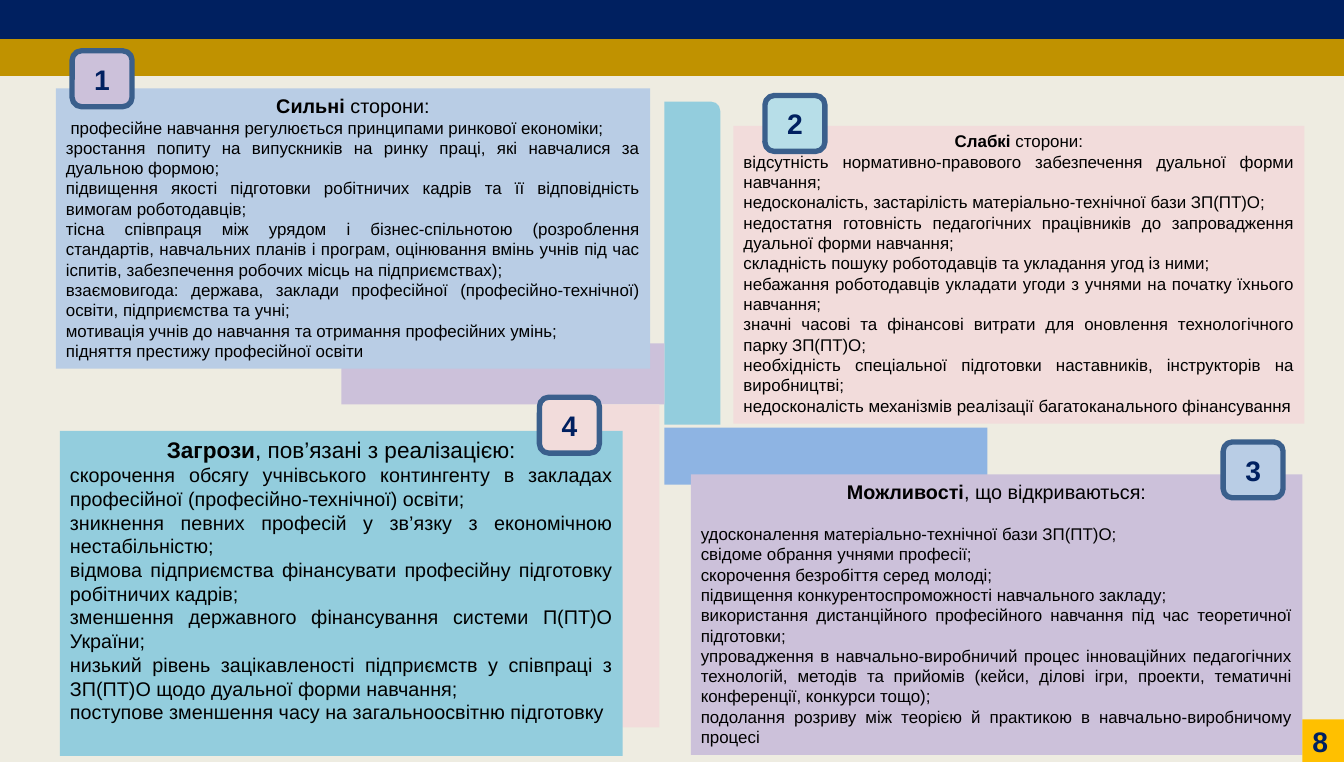
from pptx import Presentation
from pptx.dml.color import RGBColor
from pptx.enum.shapes import MSO_SHAPE
from pptx.enum.text import MSO_ANCHOR, PP_ALIGN
from pptx.util import Inches, Pt

RECTANGLE = MSO_SHAPE.RECTANGLE
ROUNDED = MSO_SHAPE.ROUNDED_RECTANGLE
ONE_ROUND_CORNER = MSO_SHAPE.ROUND_1_RECTANGLE
LEFT, CENTER, JUSTIFY = PP_ALIGN.LEFT, PP_ALIGN.CENTER, PP_ALIGN.JUSTIFY
TOP, MIDDLE = MSO_ANCHOR.TOP, MSO_ANCHOR.MIDDLE

BACKGROUND = RGBColor(0xEE, 0xEC, 0xE1)
NAVY = RGBColor(0x00, 0x20, 0x60)
GOLD = RGBColor(0xC0, 0x92, 0x00)
YELLOW = RGBColor(0xFF, 0xC0, 0x00)
BLACK = RGBColor(0x00, 0x00, 0x00)
TEAL = RGBColor(0x93, 0xCD, 0xDD)
PALE_TEAL = RGBColor(0xB7, 0xDE, 0xE8)
BLUE = RGBColor(0x8E, 0xB4, 0xE3)
PALE_BLUE = RGBColor(0xB9, 0xCD, 0xE5)
LILAC = RGBColor(0xCC, 0xC1, 0xDA)
PINK = RGBColor(0xF2, 0xDC, 0xDB)
BADGE_LINE = RGBColor(0x3A, 0x5F, 0x8C)

presentation = Presentation()
presentation.slide_width = Inches(13.23)
presentation.slide_height = Inches(7.5)
slide = presentation.slides.add_slide(presentation.slide_layouts[6])
slide.background.fill.solid()
slide.background.fill.fore_color.rgb = BACKGROUND


def add_box(kind, place, fill, line=None, anchor=TOP):
    shape = slide.shapes.add_shape(kind, *[Inches(length) for length in place])
    shape.shadow.inherit = False
    shape.fill.solid()
    shape.fill.fore_color.rgb = fill
    if line is None:
        shape.line.fill.background()
    else:
        shape.line.color.rgb = line
        shape.line.width = Pt(3.78)
    shape.text_frame.word_wrap = True
    shape.text_frame.vertical_anchor = anchor
    return shape


def add_run(paragraph, text, size, color=BLACK, bold=False):
    run = paragraph.add_run()
    run.text = text
    run.font.name = "Arial"
    run.font.size = Pt(size)
    run.font.bold = bold
    run.font.color.rgb = color


# Header bars
for top, color in [(0.36, GOLD), (0, NAVY)]:
    add_box(RECTANGLE, (0, top, 13.23, 0.36), color, color)

# Pinwheel arms behind the panels
for place, rotation, color in [
    ((6.54, 1, 0.55, 3.18), 0, TEAL),
    ((7.85, 2.9, 0.56, 3.18), 90, BLUE),
    ((4.65, 2.09, 0.6, 3.18), 270, LILAC),
    ((5.91, 3.98, 0.58, 3.18), 180, PINK),
]:
    add_box(ONE_ROUND_CORNER, place, color).rotation = rotation

# SWOT panels: place, fill, heading (bold, plain, size, space after), item size, items
panels = [
    ((0.55, 0.87, 5.85, 2.76), PALE_BLUE, ("Сильні", " сторони:", 14, 0), 12, [
        " професійне навчання регулюється принципами ринкової економіки;",
        "зростання попиту на випускників на ринку праці, які навчалися за дуальною формою;",
        "підвищення якості підготовки робітничих кадрів та її відповідність вимогам роботодавців;",
        "тісна співпраця між урядом і бізнес-спільнотою (розроблення стандартів, навчальних "
        "планів і програм, оцінювання вмінь учнів під час іспитів, забезпечення робочих місць "
        "на підприємствах);",
        "взаємовигода: держава, заклади професійної (професійно-технічної) освіти, "
        "підприємства та учні;",
        "мотивація учнів до навчання та отримання професійних умінь;",
        "підняття престижу професійної освіти",
    ]),
    ((7.22, 1.24, 5.62, 2.93), PINK, ("Слабкі", " сторони:", 12, 0), 12, [
        "відсутність нормативно-правового забезпечення дуальної форми навчання;",
        "недосконалість, застарілість матеріально-технічної бази ЗП(ПТ)О;",
        "недостатня готовність педагогічних працівників до запровадження дуальної форми навчання;",
        "складність пошуку роботодавців та укладання угод із ними;",
        "небажання роботодавців укладати угоди з учнями на початку їхнього навчання;",
        "значні часові та фінансові витрати для оновлення технологічного парку ЗП(ПТ)О;",
        "необхідність спеціальної підготовки наставників, інструкторів на виробництві;",
        "недосконалість механізмів реалізації багатоканального фінансування",
    ]),
    ((0.59, 4.24, 5.54, 3.2), TEAL, ("Загрози", ", пов’язані з реалізацією:", 16, 0), 14, [
        "скорочення обсягу учнівського контингенту в закладах професійної "
        "(професійно-технічної) освіти;",
        "зникнення певних професій у зв’язку з економічною нестабільністю;",
        "відмова підприємства фінансувати професійну підготовку робітничих кадрів;",
        "зменшення державного фінансування системи П(ПТ)О України;",
        "низький рівень зацікавленості підприємств у співпраці з ЗП(ПТ)О щодо дуальної "
        "форми навчання;",
        "поступове зменшення часу на загальноосвітню підготовку",
    ]),
    ((6.8, 4.67, 6.02, 2.76), LILAC, ("Можливості", ", що відкриваються:", 14, 14.4), 12, [
        "удосконалення матеріально-технічної бази ЗП(ПТ)О;",
        "свідоме обрання учнями професії;",
        "скорочення безробіття серед молоді;",
        "підвищення конкурентоспроможності навчального закладу;",
        "використання дистанційного професійного навчання під час теоретичної підготовки;",
        "упровадження в навчально-виробничий процес інноваційних педагогічних технологій, "
        "методів та прийомів (кейси, ділові ігри, проекти, тематичні конференції, "
        "конкурси тощо);",
        "подолання розриву між теорією й практикою в навчально-виробничому процесі",
    ]),
]
for place, color, (bold_text, plain_text, heading_size, gap), item_size, items in panels:
    text_frame = add_box(RECTANGLE, place, color).text_frame
    heading = text_frame.paragraphs[0]
    heading.alignment = CENTER
    heading.space_after = Pt(gap)
    add_run(heading, bold_text, heading_size, bold=True)
    add_run(heading, plain_text, heading_size)
    for item in items:
        paragraph = text_frame.add_paragraph()
        paragraph.alignment = JUSTIFY
        add_run(paragraph, item, item_size)

# Numbered badges
for number, left, top, color in [
    ("1", 0.71, 0.5, LILAC),
    ("4", 5.31, 3.91, PINK),
    ("3", 12.04, 4.35, PALE_BLUE),
    ("2", 7.53, 0.94, PALE_TEAL),
]:
    badge = add_box(ROUNDED, (left, top, 0.59, 0.55), color, BADGE_LINE, MIDDLE)
    paragraph = badge.text_frame.paragraphs[0]
    paragraph.alignment = CENTER
    add_run(paragraph, number, 20, NAVY, bold=True)

# Slide number
page_number = add_box(RECTANGLE, (12.82, 7.08, 0.41, 0.42), YELLOW)
paragraph = page_number.text_frame.paragraphs[0]
paragraph.alignment = LEFT
add_run(paragraph, "8", 20, NAVY, bold=True)

presentation.save("out.pptx")
